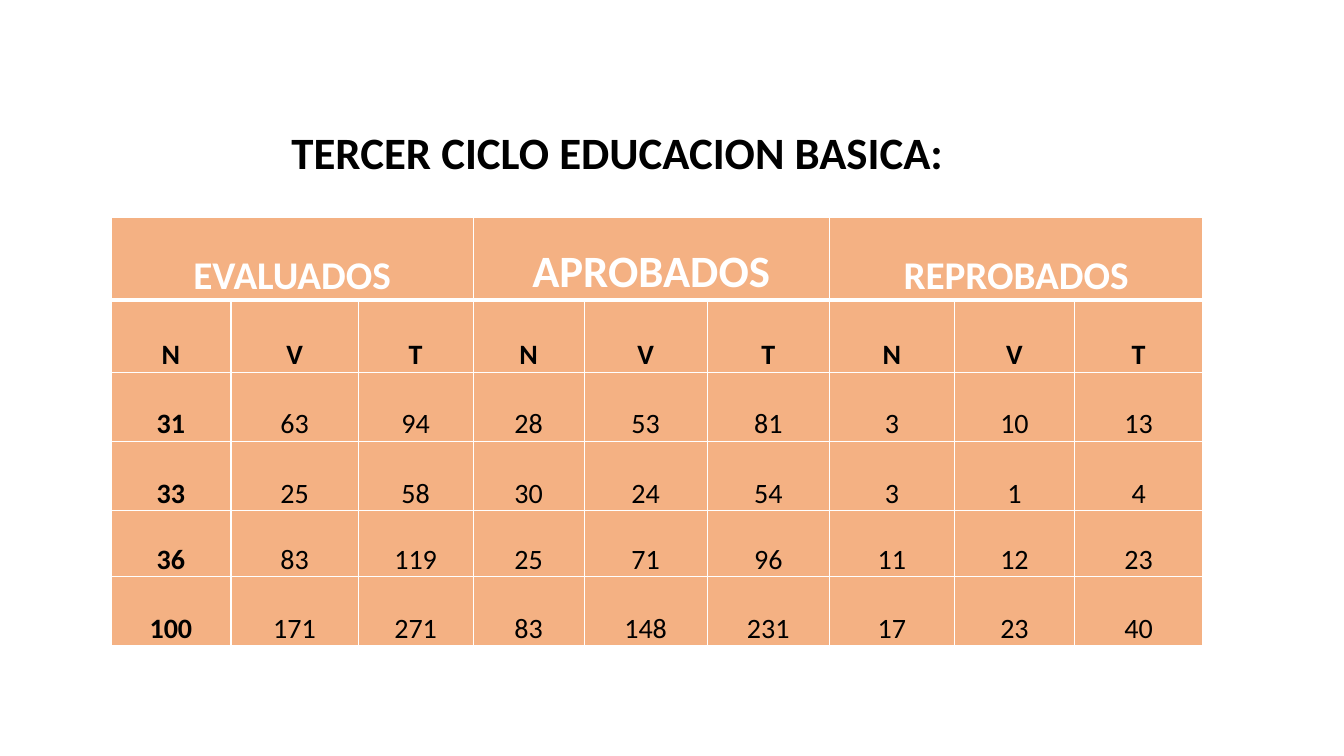
from pptx import Presentation
from pptx.dml.color import RGBColor
from pptx.enum.text import MSO_ANCHOR, PP_ALIGN
from pptx.oxml import parse_xml
from pptx.oxml.ns import nsdecls
from pptx.util import Inches, Pt

BLACK = RGBColor(0x00, 0x00, 0x00)
WHITE = RGBColor(0xFF, 0xFF, 0xFF)
ORANGE = RGBColor(0xF4, 0xB1, 0x83)
FONT = "Calibri"

COLUMN_WIDTHS = [1.19, 1.26, 1.14, 1.1, 1.22, 1.21, 1.24, 1.19, 1.27]
ROW_HEIGHTS = [0.81, 0.71, 0.68, 0.68, 0.65, 0.68]
GROUPS = [("EVALUADOS", 28), ("APROBADOS", 32), ("REPROBADOS", 28)]
SUBHEADS = ["N", "V", "T"]
RESULTS = [
    [31, 63, 94, 28, 53, 81, 3, 10, 13],
    [33, 25, 58, 30, 24, 54, 3, 1, 4],
    [36, 83, 119, 25, 71, 96, 11, 12, 23],
    [100, 171, 271, 83, 148, 231, 17, 23, 40],
]


def write(tf, text, size, color, bold, spacing):
    p = tf.paragraphs[0]
    p.alignment = PP_ALIGN.CENTER
    p.line_spacing = spacing
    r = p.add_run()
    r.text = text
    r.font.name = FONT
    r.font.size = Pt(size)
    r.font.bold = bold
    r.font.color.rgb = color


def add_borders(cell, top, bottom):
    tc_pr = cell._tc.get_or_add_tcPr()
    sides = [("lnL", 1), ("lnR", 1), ("lnT", top), ("lnB", bottom)]
    for i, (tag, width) in enumerate(sides):
        tc_pr.insert(i, parse_xml(
            f'<a:{tag} {nsdecls("a")} w="{Pt(width)}"><a:solidFill>'
            f'<a:srgbClr val="{WHITE}"/></a:solidFill></a:{tag}>'))


def style_cell(cell, row):
    cell.fill.solid()
    cell.fill.fore_color.rgb = ORANGE
    cell.vertical_anchor = MSO_ANCHOR.BOTTOM
    cell.margin_left = cell.margin_right = Inches(0.05)
    cell.margin_top = cell.margin_bottom = 0
    add_borders(cell, 3 if row == 1 else 1, 3 if row == 0 else 1)


def add_title(s, left, top, width, height):
    title = s.shapes.title
    title.left, title.top = Inches(left), Inches(top)
    title.width, title.height = Inches(width), Inches(height)
    tf = title.text_frame
    tf.vertical_anchor = MSO_ANCHOR.MIDDLE
    write(tf, "TERCER CICLO EDUCACION BASICA:", 32, BLACK, True, 0.9)


def add_results_table(s, left, top, width, height):
    table = s.shapes.add_table(
        len(ROW_HEIGHTS), len(COLUMN_WIDTHS),
        Inches(left), Inches(top), Inches(width), Inches(height)).table
    for column, share in zip(table.columns, COLUMN_WIDTHS):
        column.width = Inches(width * share / sum(COLUMN_WIDTHS))
    for row, share in zip(table.rows, ROW_HEIGHTS):
        row.height = Inches(height * share / sum(ROW_HEIGHTS))
    for row in range(len(ROW_HEIGHTS)):
        for col in range(len(COLUMN_WIDTHS)):
            style_cell(table.cell(row, col), row)

    span = len(SUBHEADS)
    for i, (name, size) in enumerate(GROUPS):
        cell = table.cell(0, i * span)
        cell.merge(table.cell(0, (i + 1) * span - 1))
        write(cell.text_frame, name, size, WHITE, True, 1.15)
    for row, values in enumerate([SUBHEADS * len(GROUPS)] + RESULTS, 1):
        for col, value in enumerate(values):
            write(table.cell(row, col).text_frame, str(value), 20, BLACK,
                  row == 1 or col == 0, 1.15)


def main():
    prs = Presentation()
    prs.slide_width, prs.slide_height = Inches(13.33), Inches(7.5)
    s = prs.slides.add_slide(prs.slide_layouts[5])
    add_title(s, 0.16, 1.28, 11.93, 0.51)
    add_results_table(s, 1.1, 2.16, 10.83, 4.25)
    prs.save("out.pptx")


if __name__ == "__main__":
    main()
